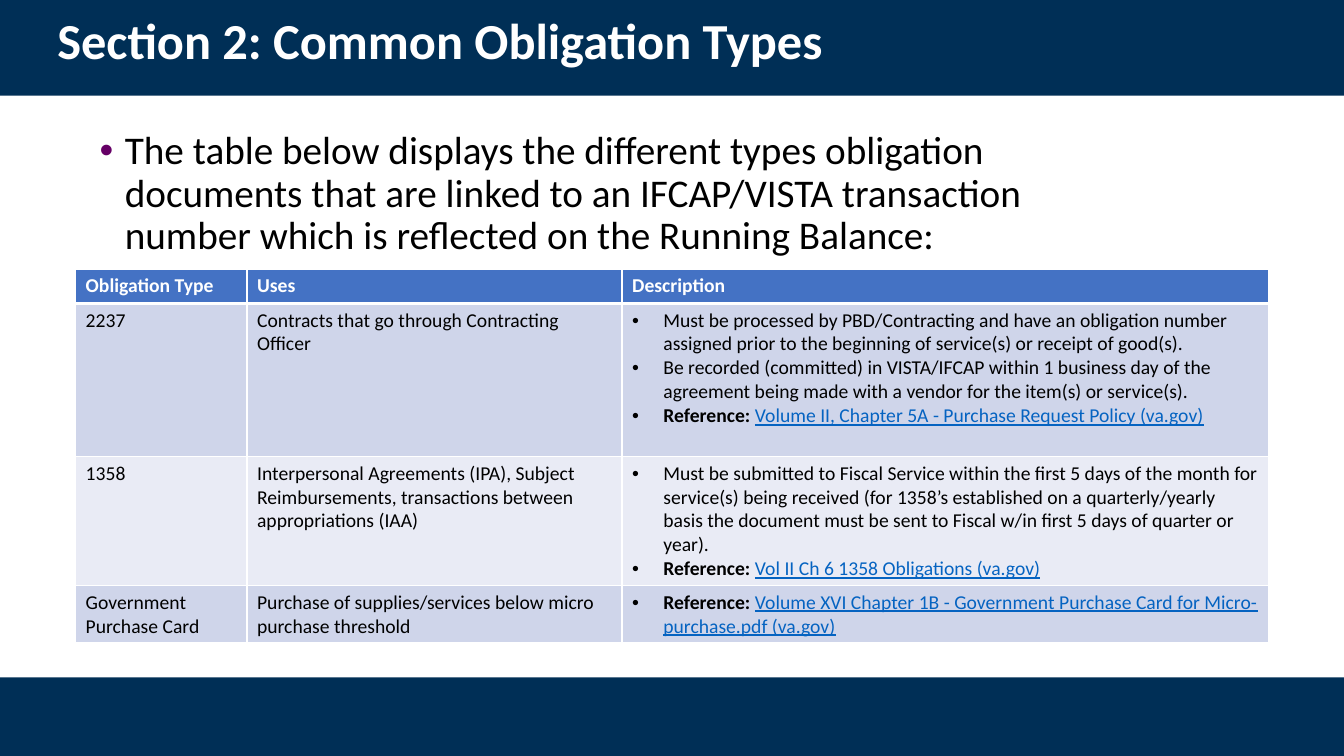
"""Build the slide on common obligation types."""
import pptx
import pptx.dml.color
import pptx.enum.shapes
import pptx.enum.text
import pptx.oxml
import pptx.oxml.ns
import pptx.util

Inches = pptx.util.Inches
Pt = pptx.util.Pt
RGBColor = pptx.dml.color.RGBColor

NAVY = RGBColor(0x00, 0x2F, 0x56)
WHITE = RGBColor(0xFF, 0xFF, 0xFF)
BLACK = RGBColor(0x00, 0x00, 0x00)
PURPLE = RGBColor(0x66, 0x00, 0x66)
HEADER_BLUE = RGBColor(0x44, 0x72, 0xC4)
LINK_BLUE = RGBColor(0x05, 0x63, 0xC1)
BANDS = [RGBColor(0xCF, 0xD5, 0xEA), RGBColor(0xE9, 0xEB, 0xF5)]

TITLE = "Section 2: Common Obligation Types"
INTRO = ("The table below displays the different types obligation documents that are linked to an "
         "IFCAP/VISTA transaction number which is reflected on the Running Balance:")
HEADINGS = ["Obligation Type", "Uses", "Description"]
OBLIGATIONS = [
    ("2237", "Contracts that go through Contracting Officer",
     ["Must be processed by PBD/Contracting and have an obligation number assigned prior to the "
      "beginning of service(s) or receipt of good(s).",
      "Be recorded (committed) in VISTA/IFCAP within 1 business day of the agreement being made "
      "with a vendor for the item(s) or service(s)."],
     "Volume II, Chapter 5A - Purchase Request Policy (va.gov)"),
    ("1358", "Interpersonal Agreements (IPA), Subject Reimbursements, transactions between "
     "appropriations (IAA)",
     ["Must be submitted to Fiscal Service within the first 5 days of the month for service(s) "
      "being received (for 1358’s established on a quarterly/yearly basis the document must be "
      "sent to Fiscal w/in first 5 days of quarter or year)."],
     "Vol II Ch 6 1358 Obligations (va.gov)"),
    ("Government Purchase Card", "Purchase of supplies/services below micro purchase threshold",
     [], "Volume XVI Chapter 1B - Government Purchase Card for Micro-purchase.pdf (va.gov)"),
]
BARS = [(0, 0.95), (6.72, 0.78)]
COLUMN_WIDTHS = [1.7, 3.72, 6.41]
ROW_HEIGHTS = [0.34, 1.52, 1.28, 0.57]

HEADING_STYLE = {"size": Pt(14), "bold": True}
BODY_STYLE = {"size": Pt(14), "bold": False}
LINK_STYLE = {"size": Pt(14), "bold": False, "underline": True}


def add_run(paragraph, text, color, style):
    run = paragraph.add_run()
    run.text = text
    run.font.name = "Calibri"
    run.font.color.rgb = color
    for name, value in style.items():
        setattr(run.font, name, value)


def add_bullet(paragraph, indent, color):
    properties = paragraph._p.get_or_add_pPr()
    properties.set("marL", str(Inches(indent)))
    properties.set("indent", str(-Inches(indent)))
    namespace = pptx.oxml.ns.nsdecls("a")
    for xml in (f'<a:buClr {namespace}><a:srgbClr val="{color}"/></a:buClr>',
                f'<a:buFont {namespace} typeface="Arial"/>',
                f'<a:buChar {namespace} char="•"/>'):
        properties.append(pptx.oxml.parse_xml(xml))


def add_text_box(slide, left, top, width, height):
    frame = slide.shapes.add_textbox(*map(Inches, (left, top, width, height))).text_frame
    frame.word_wrap = True
    frame.vertical_anchor = pptx.enum.text.MSO_ANCHOR.TOP
    paragraph = frame.paragraphs[0]
    paragraph.line_spacing = 0.9
    return frame, paragraph


def format_cell(cell, fill, bottom_width):
    properties = cell._tc.get_or_add_tcPr()
    for side, width in (("L", 1), ("R", 1), ("T", 1), ("B", bottom_width)):
        properties.append(pptx.oxml.parse_xml(
            f'<a:ln{side} {pptx.oxml.ns.nsdecls("a")} w="{Pt(width)}">'
            f'<a:solidFill><a:srgbClr val="{WHITE}"/></a:solidFill></a:ln{side}>'))
    cell.fill.solid()
    cell.fill.fore_color.rgb = fill


def fill_description(cell, points, reference):
    frame = cell.text_frame
    for index in range(len(points) + 1):
        paragraph = frame.add_paragraph() if index else frame.paragraphs[0]
        add_bullet(paragraph, 0.31, BLACK)
        if index < len(points):
            add_run(paragraph, points[index], BLACK, BODY_STYLE)
        else:
            add_run(paragraph, "Reference: ", BLACK, HEADING_STYLE)
            add_run(paragraph, reference, LINK_BLUE, LINK_STYLE)


def add_obligation_table(slide):
    table = slide.shapes.add_table(
        len(ROW_HEIGHTS), len(COLUMN_WIDTHS), Inches(0.75), Inches(2.67),
        Inches(sum(COLUMN_WIDTHS)), Inches(sum(ROW_HEIGHTS))).table
    for column, width in zip(table.columns, COLUMN_WIDTHS):
        column.width = Inches(width)
    for row, height in zip(table.rows, ROW_HEIGHTS):
        row.height = Inches(height)
    for cell, heading in zip(table.rows[0].cells, HEADINGS):
        format_cell(cell, HEADER_BLUE, 3)
        add_run(cell.text_frame.paragraphs[0], heading, WHITE, HEADING_STYLE)
    for index, (kind, uses, points, reference) in enumerate(OBLIGATIONS):
        cells = list(table.rows[index + 1].cells)
        for cell in cells:
            format_cell(cell, BANDS[index % 2], 1)
        for cell, text in zip(cells, (kind, uses)):
            add_run(cell.text_frame.paragraphs[0], text, BLACK, BODY_STYLE)
        fill_description(cells[2], points, reference)


def main():
    presentation = pptx.Presentation()
    presentation.slide_width = Inches(13.33)
    presentation.slide_height = Inches(7.5)
    slide = presentation.slides.add_slide(presentation.slide_layouts[6])

    for top, height in BARS:
        bar = slide.shapes.add_shape(pptx.enum.shapes.MSO_SHAPE.RECTANGLE, 0, Inches(top),
                                     presentation.slide_width, Inches(height))
        bar.shadow.inherit = False
        bar.fill.solid()
        bar.fill.fore_color.rgb = NAVY
        bar.line.fill.background()

    title_frame, title = add_text_box(slide, 0.47, 0, 12.7, 1.42)
    title_frame.margin_top = Inches(0.16)
    add_run(title, TITLE, WHITE, {"size": Pt(36), "bold": True})

    intro = add_text_box(slide, 0.89, 1.25, 10.55, 5.42)[1]
    add_bullet(intro, 0.25, PURPLE)
    add_run(intro, INTRO, BLACK, {"size": Pt(28)})

    add_obligation_table(slide)
    presentation.save("out.pptx")


if __name__ == "__main__":
    main()
